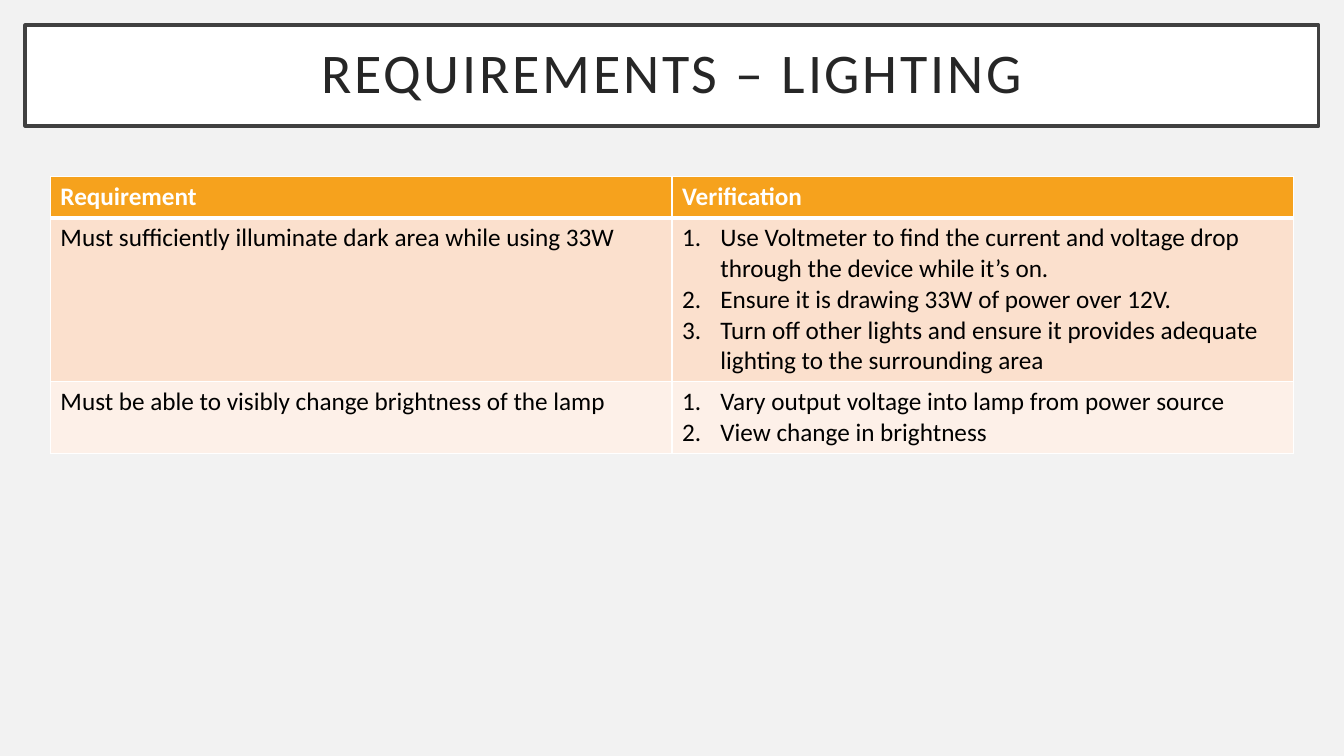
from lxml.etree import SubElement
from pptx import Presentation
from pptx.dml.color import RGBColor
from pptx.enum.shapes import MSO_SHAPE
from pptx.enum.text import MSO_ANCHOR, PP_ALIGN
from pptx.oxml import parse_xml
from pptx.oxml.ns import nsdecls, qn
from pptx.util import Inches, Pt

BACKGROUND = RGBColor(0xF2, 0xF2, 0xF2)
WHITE = RGBColor(0xFF, 0xFF, 0xFF)
BLACK = RGBColor(0x00, 0x00, 0x00)
FRAME = RGBColor(0x40, 0x40, 0x40)
TITLE = RGBColor(0x26, 0x26, 0x26)
HEADER = RGBColor(0xF6, 0xA2, 0x1D)
BANDS = [RGBColor(0xFB, 0xE0, 0xCD), RGBColor(0xFD, 0xF0, 0xE8)]

HEADINGS = ["Requirement", "Verification"]
REQUIREMENTS = [
    ("Must sufficiently illuminate dark area while using 33W", [
        "Use Voltmeter to find the current and voltage drop through the device while it’s on.",
        "Ensure it is drawing 33W of power over 12V.",
        "Turn off other lights and ensure it provides adequate lighting to the surrounding area",
    ]),
    ("Must be able to visibly change brightness of the lamp", [
        "Vary output voltage into lamp from power source",
        "View change in brightness",
    ]),
]
ROW_HEIGHTS = [0.41, 1.61, 0.69]


def write_text(frame, lines, size=18, color=BLACK, bold=False, font="Calibri",
               align=PP_ALIGN.LEFT, line_spacing=None, tracking=None, numbered=False):
    for index, line in enumerate(lines):
        paragraph = frame.add_paragraph() if index else frame.paragraphs[0]
        paragraph.alignment = align
        if line_spacing:
            paragraph.line_spacing = line_spacing
        run = paragraph.add_run()
        run.text = line
        run.font.name = font
        run.font.size = Pt(size)
        run.font.bold = bold
        run.font.color.rgb = color
        if tracking:
            run.font._element.set("spc", str(int(tracking * 100)))
        if numbered:
            properties = paragraph._p.get_or_add_pPr()
            properties.set("marL", str(Inches(0.38)))
            properties.set("indent", str(Inches(-0.38)))
            SubElement(properties, qn("a:buFont"), typeface="+mj-lt")
            SubElement(properties, qn("a:buAutoNum"), type="arabicPeriod")


class SlideBuilder:
    def __init__(self, presentation):
        self.slide = presentation.slides.add_slide(presentation.slide_layouts[6])
        background = self.slide.background.fill
        background.solid()
        background.fore_color.rgb = BACKGROUND

    def title_box(self, text, left, top, width, height):
        shape = self.slide.shapes.add_shape(
            MSO_SHAPE.RECTANGLE, Inches(left), Inches(top), Inches(width), Inches(height))
        shape.shadow.inherit = False
        shape.fill.solid()
        shape.fill.fore_color.rgb = WHITE
        shape.line.color.rgb = FRAME
        shape.line.width = Pt(2.5)
        frame = shape.text_frame
        frame.word_wrap = True
        frame.vertical_anchor = MSO_ANCHOR.MIDDLE
        frame.margin_left = frame.margin_right = Inches(0.2)
        frame.margin_top = frame.margin_bottom = Inches(0.2)
        write_text(frame, [text], size=40, color=TITLE, align=PP_ALIGN.CENTER,
                   line_spacing=0.9, tracking=2)

    def table(self, left, top, width, row_heights, column_count):
        graphic = self.slide.shapes.add_table(
            len(row_heights), column_count, Inches(left), Inches(top),
            Inches(width), Inches(sum(row_heights)))
        for row, height in zip(graphic.table.rows, row_heights):
            row.height = Inches(height)
        return graphic.table

    def cell(self, cell, lines, fill, top_border=1, bottom_border=1, **style):
        cell.fill.solid()
        cell.fill.fore_color.rgb = fill
        self.borders(cell, L=1, R=1, T=top_border, B=bottom_border)
        write_text(cell.text_frame, lines, **style)

    def borders(self, cell, **widths):
        properties = cell._tc.get_or_add_tcPr()
        for index, (side, width) in enumerate(widths.items()):
            properties.insert(index, parse_xml(
                f'<a:ln{side} {nsdecls("a")} w="{Pt(width)}"><a:solidFill>'
                f'<a:srgbClr val="{WHITE}"/></a:solidFill></a:ln{side}>'))


def main():
    presentation = Presentation()
    presentation.slide_width = Inches(13.33)
    presentation.slide_height = Inches(7.5)
    builder = SlideBuilder(presentation)

    # Requirements table
    table = builder.table(0.5, 1.75, 12.33, ROW_HEIGHTS, len(HEADINGS))
    for column, heading in enumerate(HEADINGS):
        builder.cell(table.cell(0, column), [heading], HEADER, bottom_border=3,
                     color=WHITE, bold=True)
    for row, (requirement, steps) in enumerate(REQUIREMENTS, start=1):
        band = BANDS[(row - 1) % len(BANDS)]
        top_border = 3 if row == 1 else 1
        builder.cell(table.cell(row, 0), [requirement], band, top_border)
        builder.cell(table.cell(row, 1), steps, band, top_border, numbered=True)

    # Title
    builder.title_box("REQUIREMENTS – LIGHTING", 0.25, 0.25, 12.83, 1)

    presentation.save("out.pptx")


if __name__ == "__main__":
    main()
